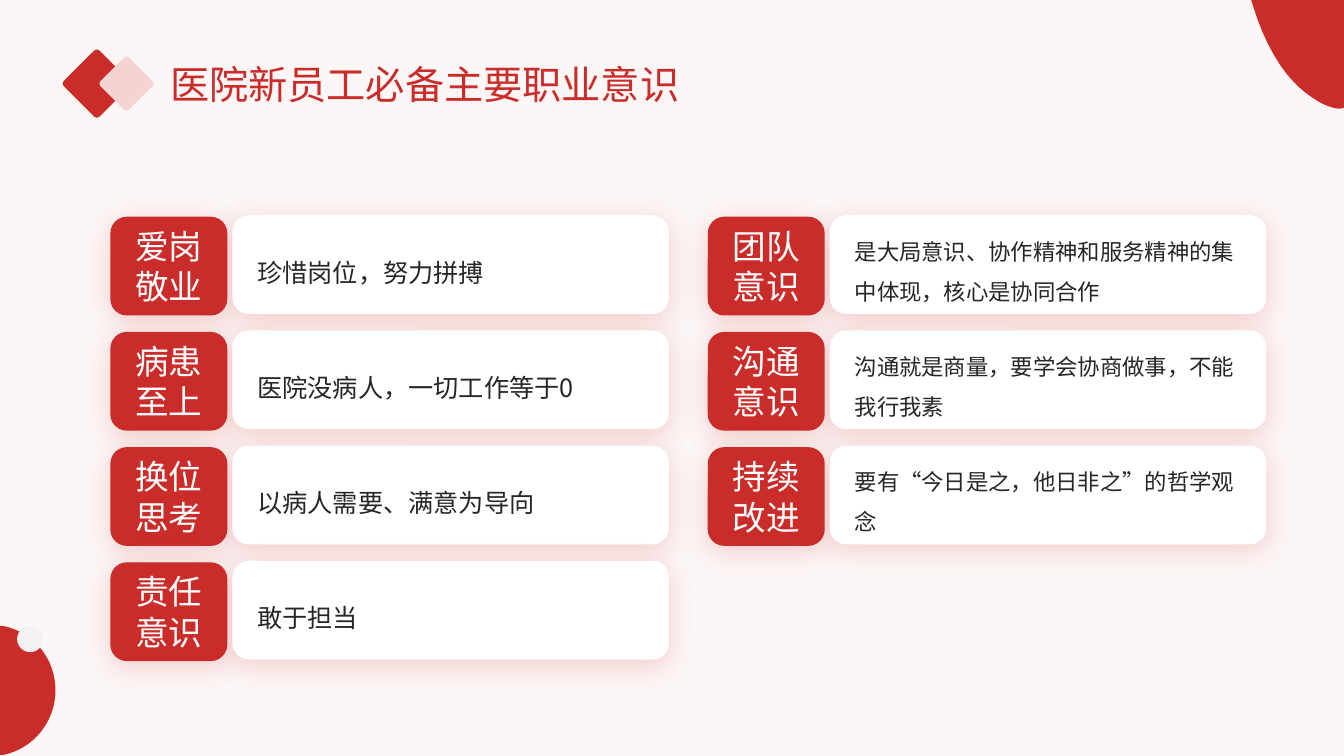
"""Build the slide on the main kinds of professional awareness for new hospital staff."""
from dataclasses import dataclass
from itertools import chain
from typing import Any

from lxml import etree
from pptx import Presentation
from pptx import util as u
from pptx.dml.color import RGBColor
from pptx.enum import shapes, text
from pptx.oxml import ns

RED = RGBColor(0xCA, 0x2C, 0x29)
PINK = RGBColor(0xF6, 0xD3, 0xD3)
BACKGROUND = RGBColor(0xFD, 0xF6, 0xF6)
PALE_GREY = RGBColor(0xF2, 0xF2, 0xF2)
WHITE = RGBColor(0xFF, 0xFF, 0xFF)
DARK = RGBColor(0x26, 0x26, 0x26)
FONT = "Noto Sans CJK SC"
SLIDE_WIDTH, SLIDE_HEIGHT = 13.33, 7.5
GRID_LEFT, GRID_TOP = 1.095, 2.135
COLUMN_PITCH, ROW_PITCH = 5.925, 8 / 7
LABEL_WIDTH, DETAIL_WIDTH, CARD_HEIGHT = 1.16, 4.33, 0.98
DETAIL_OFFSET, LABEL_DROP = 1.21, 0.015
UNITS_PER_INCH = 1000

Point = tuple[float, float]
Segment = tuple[Point, ...]


@dataclass(frozen=True)
class Card:
    column: int
    row: int
    label: str
    detail: str
    size: int


@dataclass(frozen=True)
class Diamond:
    left: float
    top: float
    side: float
    rounding: float
    color: RGBColor


@dataclass(frozen=True)
class Corner:
    start: Point
    segments: tuple[Segment, ...]


CARDS = (
    Card(0, 0, "爱岗敬业", "珍惜岗位，努力拼搏", 18),
    Card(0, 1, "病患至上", "医院没病人，一切工作等于0", 18),
    Card(0, 2, "换位思考", "以病人需要、满意为导向", 18),
    Card(0, 3, "责任意识", "敢于担当", 18),
    Card(1, 0, "团队意识", "是大局意识、协作精神和服务精神的集中体现，核心是协同合作", 16),
    Card(1, 1, "沟通意识", "沟通就是商量，要学会协商做事，不能我行我素", 16),
    Card(1, 2, "持续改进", "要有“今日是之，他日非之”的哲学观念", 16),
)
DIAMONDS = (
    Diamond(0.71, 0.58, 0.5, 0.076, RED),
    Diamond(1.055, 0.63, 0.4, 0.085, PINK),
)
TOP_CORNER = Corner((13.33, 0), (
    ((13.33, 0.35), (13.33, 0.69), (13.33, 1.04)),
    ((13.33, 1.05), (13.33, 1.06), (13.33, 1.07)),
    ((13.3, 1.08), (13.26, 1.08), (13.23, 1.07)),
    ((13.14, 1.05), (13.06, 1), (12.99, 0.95)),
    ((12.82, 0.83), (12.7, 0.67), (12.6, 0.48)),
    ((12.52, 0.33), (12.46, 0.17), (12.41, 0)),
    ((12.72, 0), (13.03, 0), (13.33, 0)),
))
BOTTOM_CORNER = Corner((0, 6.21), (
    ((0, 7.49),),
    ((0.03, 7.49),),
    ((0.33, 7.43), (0.55, 7.16), (0.55, 6.85)),
    ((0.55, 6.53), (0.33, 6.27), (0.03, 6.21)),
))


def set_values(target: Any, values: dict[str, Any]) -> None:
    """Set each named attribute of the target."""
    for name, value in values.items():
        setattr(target, name, value)


def paint(shape: Any, color: RGBColor) -> None:
    """Give the shape a flat fill with no outline or shadow."""
    shape.fill.solid()
    shape.fill.fore_color.rgb = color
    shape.line.fill.background()
    shape.shadow.inherit = False


def add_shape(container: Any, kind: shapes.MSO_SHAPE, left: float, top: float,
              width: float, height: float, color: RGBColor) -> Any:
    """Add a flat preset shape measured in inches."""
    shape = container.add_shape(kind, *map(u.Inches, (left, top, width, height)))
    paint(shape, color)
    return shape


def add_glow(shape: Any) -> None:
    """Add a soft red shadow below the shape."""
    effects = shape.element.spPr.find(ns.qn("a:effectLst"))
    shadow = etree.SubElement(effects, ns.qn("a:outerShdw"), blurRad=str(u.Pt(20)),
                              dist=str(u.Pt(4)), dir="5400000", algn="t", rotWithShape="0")
    color = etree.SubElement(shadow, ns.qn("a:srgbClr"), val=str(RED))
    etree.SubElement(color, ns.qn("a:alpha"), val="20000")


def write(shape: Any, content: str, size: int, color: RGBColor,
          frame_format: dict[str, Any], paragraph_format: dict[str, Any]) -> None:
    """Write one formatted paragraph in the shape."""
    set_values(shape.text_frame, frame_format)
    paragraph = shape.text_frame.paragraphs[0]
    set_values(paragraph, paragraph_format)
    run = paragraph.add_run()
    run.text = content
    run.font.color.rgb = color
    set_values(run.font, {"size": u.Pt(size), "name": FONT})
    etree.SubElement(run._r.get_or_add_rPr(), ns.qn("a:ea"), typeface=FONT)


def add_corner(container: Any, corner: Corner) -> None:
    """Add a red corner ornament, bending each three-point segment into a cubic curve."""
    start, *points = [(x * UNITS_PER_INCH, y * UNITS_PER_INCH)
                      for x, y in chain([corner.start], *corner.segments)]
    builder = container.build_freeform(*start, scale=u.Inches(1) / UNITS_PER_INCH)
    builder.add_line_segments(points, close=True)
    shape = builder.convert_to_shape()
    paint(shape, RED)
    lines = iter(list(shape.element.iter(ns.qn("a:lnTo"))))
    for segment in corner.segments:
        first, *others = [next(lines) for _ in segment]
        if others:
            first.tag = ns.qn("a:cubicBezTo")
        for line in others:
            first.append(line[0])
            line.getparent().remove(line)


def add_diamond(container: Any, diamond: Diamond) -> None:
    """Add a rounded square turned onto its corner."""
    shape = add_shape(container, shapes.MSO_SHAPE.ROUNDED_RECTANGLE, diamond.left,
                      diamond.top, diamond.side, diamond.side, diamond.color)
    shape.rotation = 45
    shape.adjustments[0] = diamond.rounding


def add_card(container: Any, card: Card) -> None:
    """Add a red label and its white detail box at a grid cell."""
    left = GRID_LEFT + card.column * COLUMN_PITCH
    top = GRID_TOP + card.row * ROW_PITCH
    rounded = shapes.MSO_SHAPE.ROUNDED_RECTANGLE
    frame = {"word_wrap": True, "vertical_anchor": text.MSO_ANCHOR.MIDDLE}
    label = add_shape(container, rounded, left, top + LABEL_DROP,
                      LABEL_WIDTH, CARD_HEIGHT, RED)
    add_glow(label)
    write(label, card.label, 24, WHITE, frame, {"alignment": text.PP_ALIGN.CENTER})
    detail = add_shape(container, rounded, left + DETAIL_OFFSET, top,
                       DETAIL_WIDTH, CARD_HEIGHT, WHITE)
    add_glow(detail)
    write(detail, card.detail, card.size, DARK, frame | {"margin_left": u.Inches(0.2)},
          {"alignment": text.PP_ALIGN.LEFT, "line_spacing": 1.5})


def main() -> None:
    """Build and save the presentation."""
    presentation = Presentation()
    set_values(presentation, {"slide_width": u.Inches(SLIDE_WIDTH),
                              "slide_height": u.Inches(SLIDE_HEIGHT)})
    slide = presentation.slides.add_slide(presentation.slide_layouts[6])
    slide.background.fill.solid()
    slide.background.fill.fore_color.rgb = BACKGROUND
    add_corner(slide.shapes, TOP_CORNER)
    ornament = slide.shapes.add_group_shape().shapes
    add_corner(ornament, BOTTOM_CORNER)
    add_shape(ornament, shapes.MSO_SHAPE.OVAL, 0.17, 6.21, 0.26, 0.26, PALE_GREY)
    title = slide.shapes.add_textbox(*map(u.Inches, (1.59, 0.55, 5.31, 0.57)))
    write(title, "医院新员工必备主要职业意识", 28, RED,
          {"word_wrap": False, "auto_size": text.MSO_AUTO_SIZE.SHAPE_TO_FIT_TEXT}, {})
    emblem = slide.shapes.add_group_shape().shapes
    for diamond in DIAMONDS:
        add_diamond(emblem, diamond)
    for card in CARDS:
        add_card(slide.shapes.add_group_shape().shapes, card)
    presentation.save("out.pptx")


if __name__ == "__main__":
    main()
